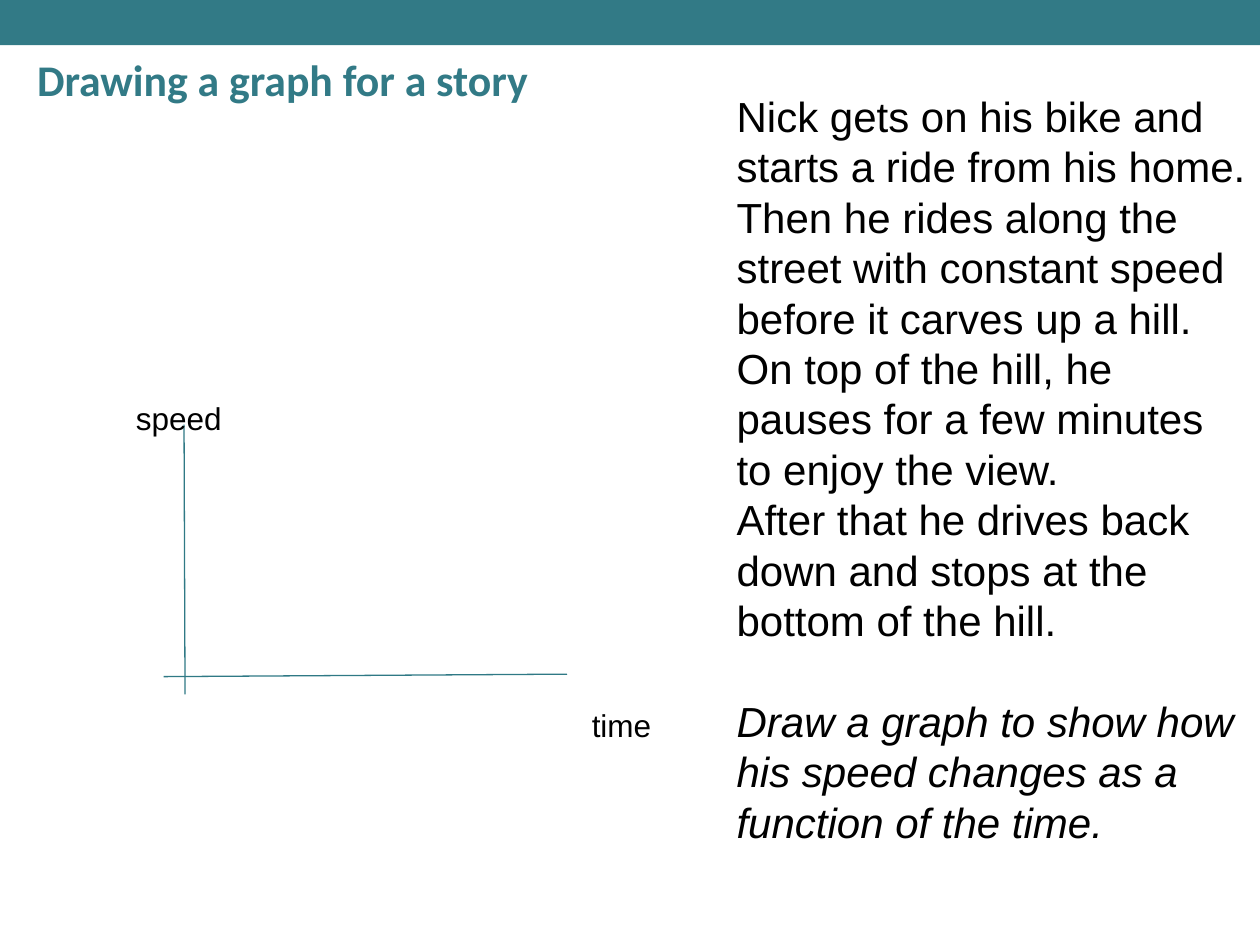
from lxml.etree import SubElement
from pptx import Presentation
from pptx.dml.color import RGBColor
from pptx.enum.shapes import MSO_CONNECTOR, MSO_SHAPE
from pptx.enum.text import MSO_ANCHOR, MSO_AUTO_SIZE
from pptx.oxml.ns import qn
from pptx.util import Cm, Pt

TEAL = "327A86"
AXIS = "2F7985"
BLACK = "000000"

STORY = [
    "Nick gets on his bike and starts a ride from his home.",
    "Then he rides along the street with constant speed before it carves up a hill.",
    "On top of the hill, he pauses for a few minutes to enjoy the view.",
    "After that he drives back down and stops at the bottom of the hill.",
]
TASK = "Draw a graph to show how his speed changes as a function of the time."


def rgb(value):
    return RGBColor.from_string(value)


class StorySlide:
    """Holds the slide and the style shared by its elements."""

    font = "Arial"
    line_height = Pt(28.8)

    def __init__(self, prs):
        self.s = prs.slides.add_slide(prs.slide_layouts[6])

    def bar(self, width, height):
        sp = self.s.shapes.add_shape(MSO_SHAPE.RECTANGLE, 0, 0, width, height)
        sp.shadow.inherit = False
        sp.fill.solid()
        sp.fill.fore_color.rgb = rgb(TEAL)
        sp.line.fill.background()

    def text(self, lines, box, size, color=BLACK, font=None, bold=False, wrap=True):
        sp = self.s.shapes.add_textbox(*map(Cm, box))
        tf = sp.text_frame
        tf.word_wrap = wrap
        tf.auto_size = MSO_AUTO_SIZE.SHAPE_TO_FIT_TEXT
        tf.text = "\n".join(lines)
        for p in tf.paragraphs:
            for r in p.runs:
                r.font.name = font or self.font
                r.font.size = Pt(size)
                r.font.bold = bold
                r.font.color.rgb = rgb(color)
        return tf

    def title(self, text, box):
        tf = self.text([text], box, 25, TEAL, "Calibri", bold=True)
        tf.auto_size = MSO_AUTO_SIZE.NONE
        tf.vertical_anchor = MSO_ANCHOR.MIDDLE
        tf.margin_left = Cm(0.45)

    def story(self, lines, task, box):
        """Adds the story and, one line below it, the task in italics."""
        tf = self.text([*lines, task], box, 24)
        for p in tf.paragraphs:
            p.line_spacing = self.line_height
        p = tf.paragraphs[-1]
        p.space_before = self.line_height
        p.runs[0].font.italic = True

    def axes(self, *lines):
        group = self.s.shapes.add_group_shape()
        for ends in lines:
            line = group.shapes.add_connector(MSO_CONNECTOR.STRAIGHT, *map(Cm, ends))
            line.line.color.rgb = rgb(AXIS)
            line.line.width = Pt(0.75)
            SubElement(line._element.spPr, qn("a:effectLst"))


def main():
    prs = Presentation()
    prs.slide_width, prs.slide_height = Cm(25.4), Cm(19.05)

    slide = StorySlide(prs)
    slide.bar(prs.slide_width, Cm(0.91))
    slide.title("Drawing a graph for a story", (0.3, 0.91, 23.7, 1.37))
    slide.axes((3.71, 8.56, 3.73, 14), (11.43, 13.59, 3.3, 13.64))
    slide.story(STORY, TASK, (14.6, 1.7, 10.8, 15.65))
    slide.text(["time"], (11.68, 14.1, 1.73, 1.02), 18, wrap=False)
    slide.text(["speed"], (2.49, 7.92, 2.26, 1.02), 18, wrap=False)

    prs.save("out.pptx")


if __name__ == "__main__":
    main()
